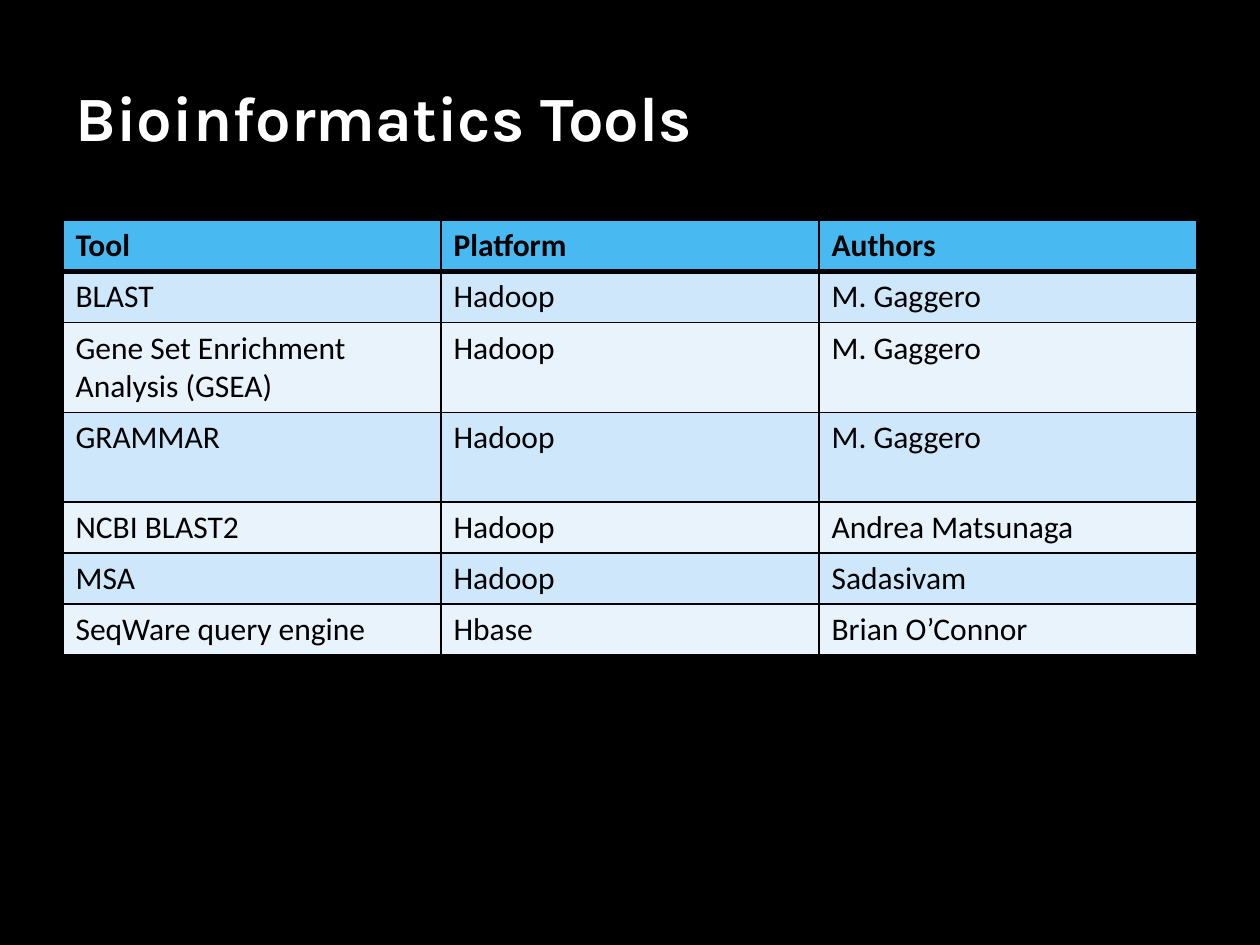
from lxml import etree
from pptx import Presentation
from pptx.dml.color import RGBColor
from pptx.enum.text import MSO_ANCHOR
from pptx.oxml.ns import qn
from pptx.util import Pt

MIDDLE = MSO_ANCHOR.MIDDLE
BLACK, WHITE = "000000", "FFFFFF"
HEADER, BANDS = "48BAF1", ("CFE7FA", "E9F3FC")
TITLE_FONT = {"name": "Karla", "size": Pt(36), "bold": True}
ROWS = [
    ("Tool", "Platform", "Authors"),
    ("BLAST", "Hadoop", "M. Gaggero"),
    ("Gene Set Enrichment Analysis (GSEA)", "Hadoop", "M. Gaggero"),
    ("GRAMMAR", "Hadoop", "M. Gaggero"),
    ("NCBI BLAST2", "Hadoop", "Andrea Matsunaga"),
    ("MSA", "Hadoop", "Sadasivam"),
    ("SeqWare query engine", "Hbase", "Brian O’Connor"),
]
HEIGHTS = [29.2, 29.2, 51.2, 51.2, 29.2, 29.2, 29.2]


def rgb(value):
    return RGBColor.from_string(value)


def write(p, text, font, color):
    r = p.add_run()
    r.text = text
    for key, value in font.items():
        setattr(r.font, key, value)
    r.font.color.rgb = rgb(color)


prs = Presentation()
prs.slide_width, prs.slide_height = Pt(720), Pt(540)
s = prs.slides.add_slide(prs.slide_layouts[6])
s.background.fill.solid()
s.background.fill.fore_color.rgb = rgb(BLACK)

title = s.shapes.add_textbox(Pt(36), Pt(21.6), Pt(648), Pt(90))
tf = title.text_frame
tf.word_wrap = True
tf.vertical_anchor = MIDDLE
write(tf.paragraphs[0], "Bioinformatics Tools", TITLE_FONT, WHITE)

frame = s.shapes.add_table(len(ROWS), len(ROWS[0]), Pt(36), Pt(126), Pt(648), Pt(sum(HEIGHTS)))
table = frame.table
for column in table.columns:
    column.width = Pt(216)

for i, (row, height) in enumerate(zip(ROWS, HEIGHTS)):
    table.rows[i].height = Pt(height)
    fill = BANDS[(i - 1) % 2] if i else HEADER
    cell_font = {"name": "Calibri", "size": Pt(18), "bold": i == 0}
    widths = {"lnL": 1, "lnR": 1, "lnT": 3 if i == 1 else 1, "lnB": 1 if i else 3}
    for j, text in enumerate(row):
        cell = table.cell(i, j)
        write(cell.text_frame.paragraphs[0], text, cell_font, BLACK)
        tcPr = cell._tc.get_or_add_tcPr()
        for side, width in widths.items():
            ln = etree.SubElement(tcPr, qn(f"a:{side}"), w=str(Pt(width)))
            solid = etree.SubElement(ln, qn("a:solidFill"))
            etree.SubElement(solid, qn("a:srgbClr"), val=BLACK)
        cell.fill.solid()
        cell.fill.fore_color.rgb = rgb(fill)

prs.save("out.pptx")
